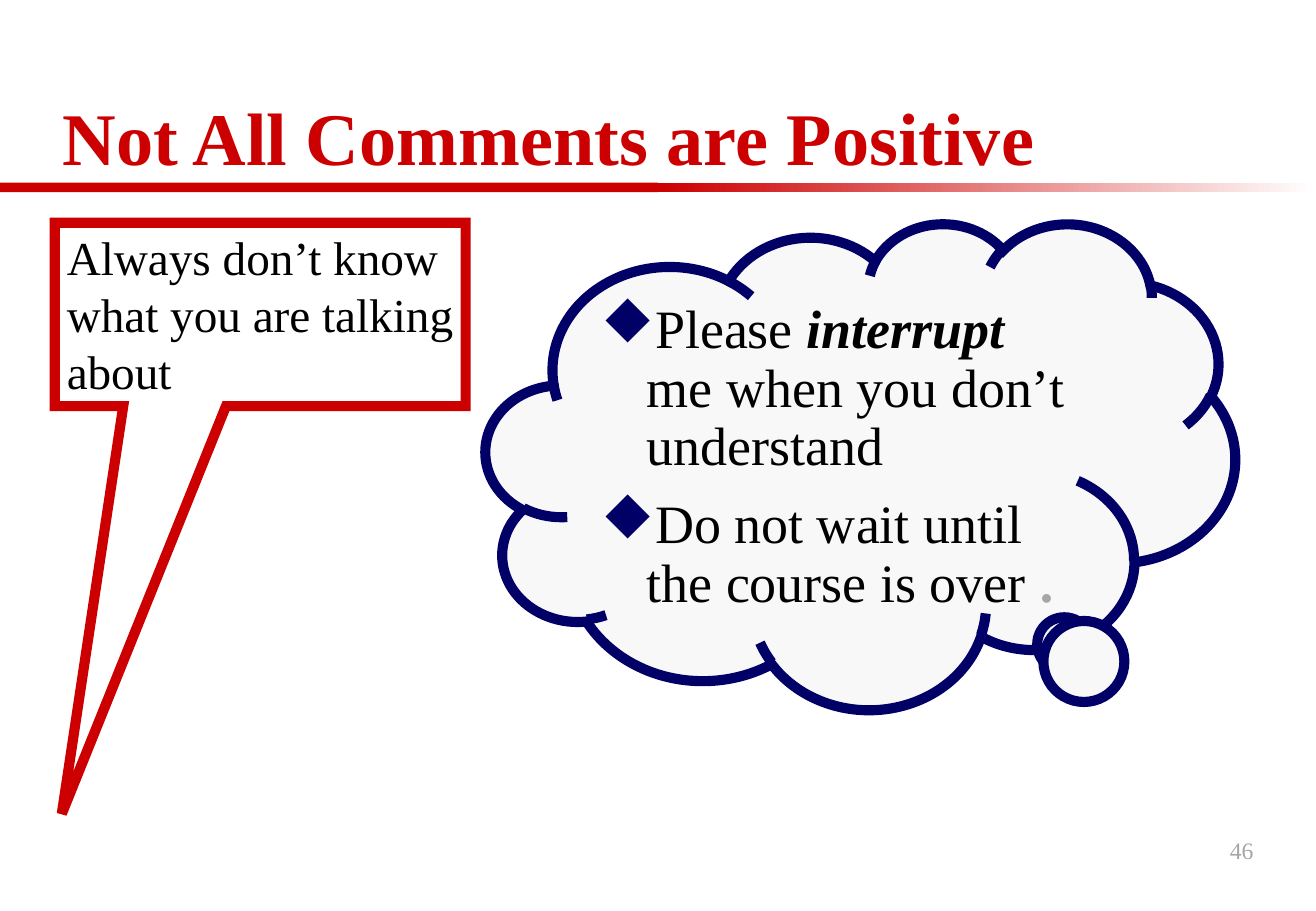
from lxml import etree
from pptx import Presentation
from pptx import util as u
from pptx.dml.color import RGBColor
from pptx.enum import shapes, text
from pptx.oxml import ns

RED, NAVY, CLOUD, GREY, BLACK, WHITE = "CC0000", "000066", "F8F8F8", "A6A6A6", "000000", "FFFFFF"


def colour(value):
    return RGBColor.from_string(value)


class Slide:
    font = "Times New Roman"
    outline = 6
    hanging = 27

    def __init__(self, deck):
        self.page = deck.slides.add_slide(deck.slide_layouts[5])

    def style(self, font, size, ink, bold=False):
        font.name, font.size, font.bold = self.font, u.Pt(size), bold
        font.color.rgb = colour(ink)

    def frame(self, shape, anchor):
        frame = shape.text_frame
        frame.word_wrap = True
        frame.vertical_anchor = anchor
        return frame

    def shape(self, kind, box, fill=None, line=None, adjust=()):
        item = self.page.shapes.add_shape(kind, *map(u.Pt, box))
        item.shadow.inherit = False
        for index, value in enumerate(adjust):
            item.adjustments[index] = value
        if fill:
            item.fill.solid()
            item.fill.fore_color.rgb = colour(fill)
        else:
            item.fill.background()
        if line:
            item.line.color.rgb = colour(line)
            item.line.width = u.Pt(self.outline)
            border = item._element.spPr.find(ns.qn("a:ln"))
            etree.SubElement(border, ns.qn("a:miter"), lim="800000")
        else:
            item.line.fill.background()
        return item

    def fade(self, bar, *inks):
        bar.fill.gradient()
        bar.fill.gradient_angle = 0
        for position, (stop, ink) in enumerate(zip(bar.fill.gradient_stops, inks)):
            stop.position = position
            stop.color.rgb = colour(ink)

    def title(self, box, words):
        heading = self.page.shapes.title
        heading.left, heading.top, heading.width, heading.height = map(u.Pt, box)
        frame = self.frame(heading, text.MSO_ANCHOR.BOTTOM)
        frame.text = words
        line = frame.paragraphs[0]
        line.alignment, line.line_spacing = text.PP_ALIGN.LEFT, 0.9
        self.style(line.font, 44, RED, True)

    def paragraph(self, line, words, size, ink=BLACK, align=text.PP_ALIGN.LEFT):
        line.text = words
        line.alignment = align
        self.style(line.font, size, ink)

    def bullet(self, line, runs):
        line.alignment, line.line_spacing = text.PP_ALIGN.LEFT, 0.9
        for words, ink, bold, italic in runs:
            run = line.add_run()
            run.text = words
            self.style(run.font, 32, ink, bold)
            run.font.italic = italic
        properties = line._p.get_or_add_pPr()
        properties.set("marL", str(u.Pt(self.hanging)))
        properties.set("indent", str(-u.Pt(self.hanging)))
        tint = etree.SubElement(properties, ns.qn("a:buClr"))
        etree.SubElement(tint, ns.qn("a:srgbClr"), val=NAVY)
        etree.SubElement(properties, ns.qn("a:buFont"), typeface="Wingdings", pitchFamily="2", charset="2")
        etree.SubElement(properties, ns.qn("a:buChar"), char="u")

    def label(self, box, words, size, ink, align):
        item = self.page.shapes.add_textbox(*map(u.Pt, box))
        frame = self.frame(item, text.MSO_ANCHOR.MIDDLE)
        self.paragraph(frame.paragraphs[0], words, size, ink, align)


def main():
    deck = Presentation()
    deck.slide_width, deck.slide_height = u.Pt(780), u.Pt(540)
    slide = Slide(deck)
    kinds = shapes.MSO_SHAPE

    slide.shape(kinds.RECTANGLE, (0, 108.3, 390, 5.6), RED)
    fading_rule = slide.shape(kinds.RECTANGLE, (390, 108.3, 390, 5.6), RED)
    slide.fade(fading_rule, RED, WHITE)
    slide.title((30, 24, 720, 87), "Not All Comments are Positive")

    request = slide.shape(kinds.CLOUD_CALLOUT, (288, 132, 444, 288), CLOUD, NAVY, (0.273, 0.369))
    advice = slide.frame(request, text.MSO_ANCHOR.TOP)
    slide.bullet(advice.paragraphs[0], [
        ("Please ", BLACK, False, False),
        ("interrupt ", BLACK, True, True),
        ("me when you don’t understand", BLACK, False, False),
    ])
    patience = advice.add_paragraph()
    patience.space_before = u.Pt(12)
    slide.bullet(patience, [
        ("Do not wait until the course is over ", BLACK, False, False),
        (".", GREY, True, False),
    ])

    complaint = slide.shape(kinds.RECTANGULAR_CALLOUT, (32.5, 132, 243.5, 108.7), None, RED, (-0.483, 2.723))
    remark = slide.frame(complaint, text.MSO_ANCHOR.TOP)
    slide.paragraph(remark.paragraphs[0], "Always don’t know what you are talking about", 28)

    slide.label((587.5, 486, 162.5, 36), "46", 14, GREY, text.PP_ALIGN.RIGHT)
    deck.save("out.pptx")


if __name__ == "__main__":
    main()
